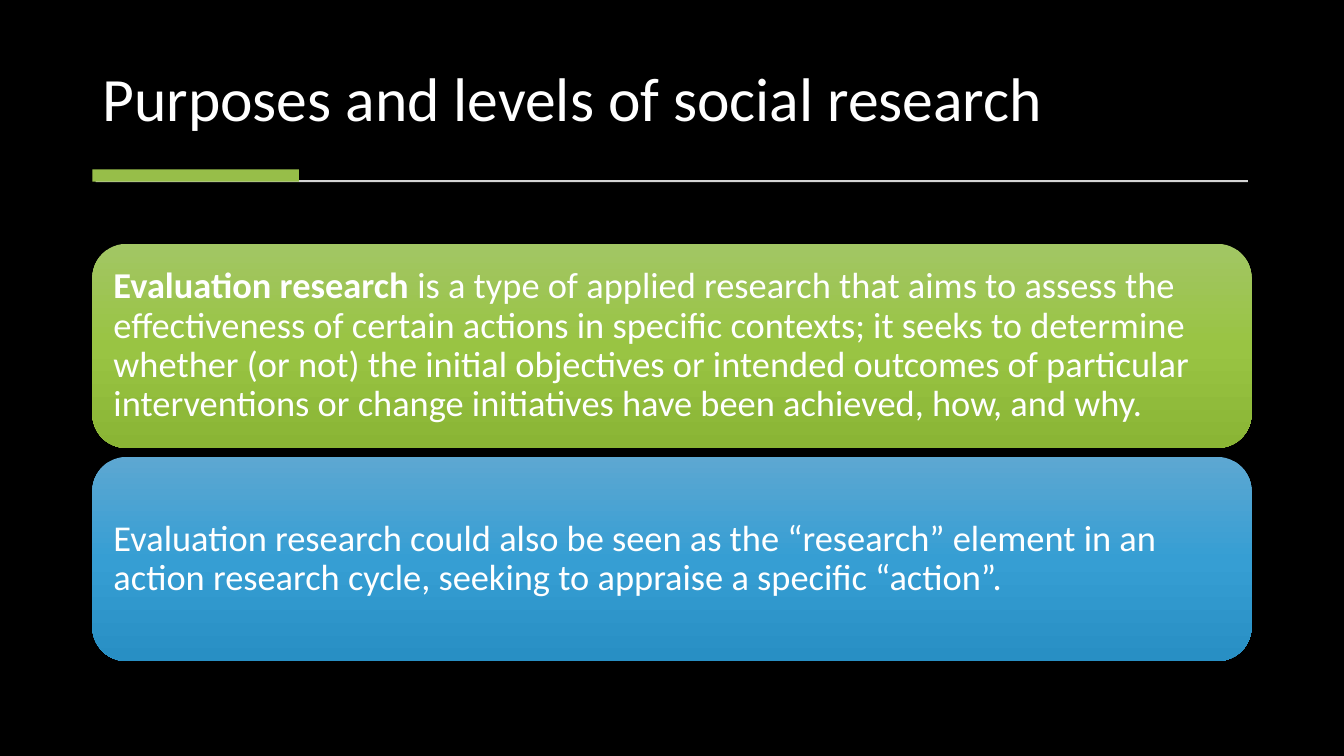
from copy import deepcopy

from pptx import Presentation
from pptx.dml.color import RGBColor as RGB
from pptx.enum.shapes import MSO_SHAPE as SHAPE
from pptx.enum.text import MSO_ANCHOR as ANCHOR, MSO_AUTO_SIZE as FIT, PP_ALIGN as ALIGN
from pptx.util import Pt

HUES = {
    "back": "000000",
    "text": "FFFFFF",
    "rule": "D5D5D5",
    "accent": "97BE49",
    "green": ["A2C664", "99C443", "8AB535"],
    "blue": ["5DA7D2", "369ED3", "288FC4"],
}
LEFT = 66

deck = Presentation()
deck.slide_width, deck.slide_height = Pt(960), Pt(540)
slide = deck.slides.add_slide(deck.slide_layouts[5])
slide.background.fill.solid()
slide.background.fill.fore_color.rgb = RGB.from_string(HUES["back"])


def add_shape(kind, x, y, w, h):
    shape = slide.shapes.add_shape(kind, Pt(x), Pt(y), Pt(w), Pt(h))
    shape.shadow.inherit = False
    shape.line.fill.background()
    return shape


def style(para, size):
    para.alignment = ALIGN.LEFT
    para.line_spacing = 0.9
    for run in para.runs:
        run.font.name = "Calibri"
        run.font.size = Pt(size)
        run.font.color.rgb = RGB.from_string(HUES["text"])


# Title
title = slide.shapes.title
title.left, title.top, title.width, title.height = Pt(LEFT), Pt(20), Pt(827), Pt(80)
frame = title.text_frame
frame.text = "Purposes and levels of social research"
frame.auto_size = FIT.NONE
frame.vertical_anchor = ANCHOR.BOTTOM
style(frame.paragraphs[0], 44)

# Rule and accent bar
for hue, box in [("rule", (68.4, 128.7, 823, 1.4)), ("accent", (LEFT, 121, 147.6, 8.8))]:
    bar = add_shape(SHAPE.RECTANGLE, *box)
    bar.fill.solid()
    bar.fill.fore_color.rgb = RGB.from_string(HUES[hue])

# Cards: each text is a list of (words, bold)
cards = [
    ("green", [
        ("Evaluation research ", True),
        ("is a type of applied research that aims to assess the effectiveness of "
         "certain actions in specific contexts; it seeks to determine whether (or not) "
         "the initial objectives or intended outcomes of particular interventions or "
         "change initiatives have been achieved, how, and why.", False),
    ]),
    ("blue", [
        ("Evaluation research could also be seen as the “research” element in an "
         "action research cycle, seeking to appraise a specific “action”.", False),
    ]),
]
for row, (hue, parts) in enumerate(cards):
    card = add_shape(SHAPE.ROUNDED_RECTANGLE, LEFT, 174.2 + row * 152.2, 828, 145.8)
    fill = card.fill
    fill.gradient()
    fill.gradient_angle = 270
    first = card._element.xpath(".//a:gs")[0]
    first.addnext(deepcopy(first))
    for stop, tone, pos in zip(fill.gradient_stops, HUES[hue], (0, 0.5, 1)):
        stop.color.rgb = RGB.from_string(tone)
        stop.position = pos

    frame = card.text_frame
    frame.word_wrap = True
    frame.vertical_anchor = ANCHOR.MIDDLE
    frame.margin_left = frame.margin_right = Pt(8)
    frame.margin_top = frame.margin_bottom = Pt(8)
    para = frame.paragraphs[0]
    for words, bold in parts:
        run = para.add_run()
        run.text = words
        run.font.bold = bold
    style(para, 26)

deck.save("out.pptx")
